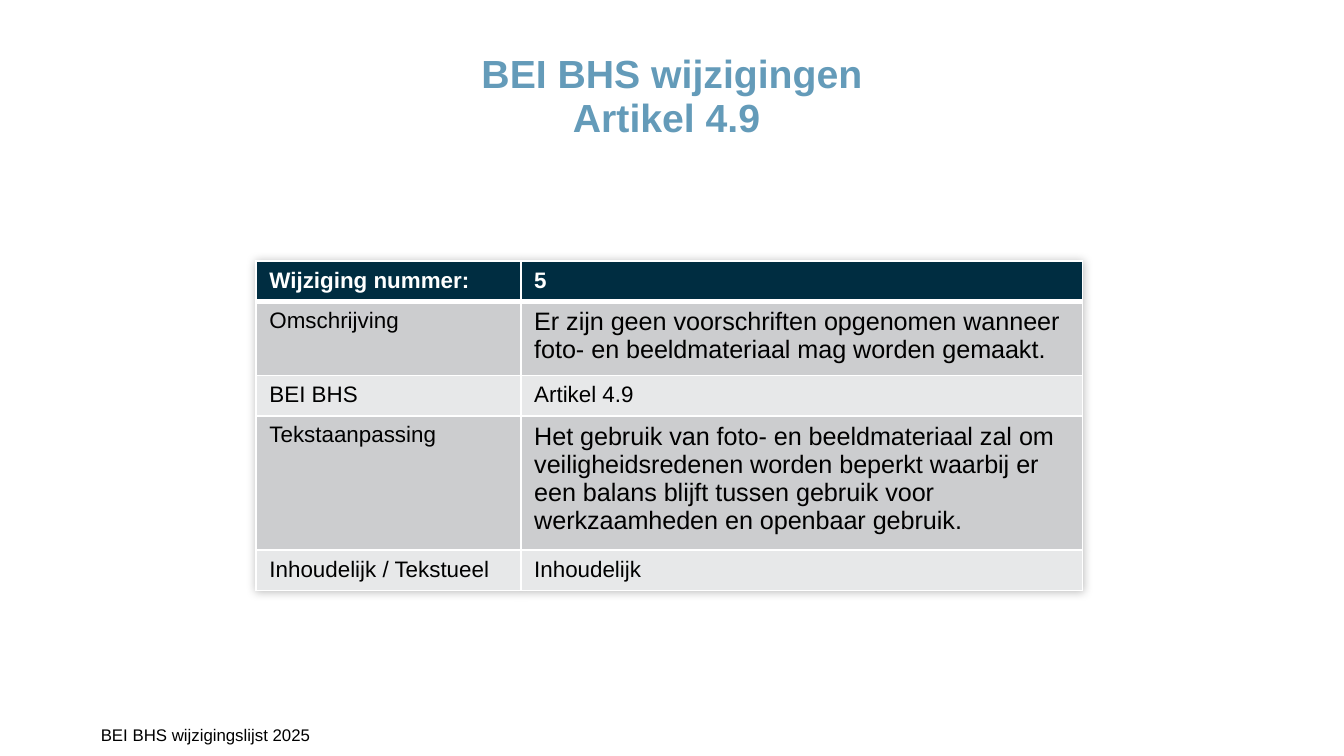
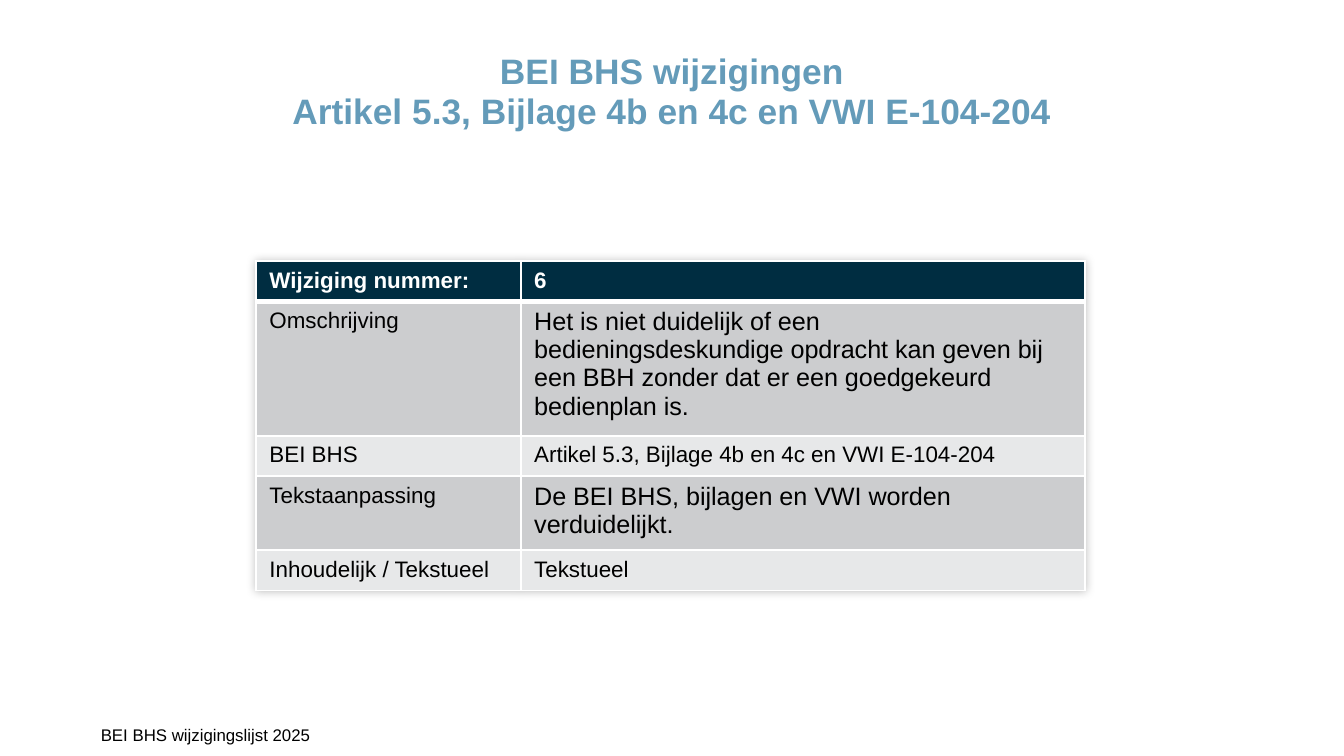
from lxml import etree
from pptx import Presentation
from pptx import util as u
from pptx.dml.color import RGBColor
from pptx.enum import text
from pptx.oxml import ns, parse_xml

HUES = {
    "title": "649BB9", "head": "002D41", "odd": "CCCDCF",
    "even": "E7E8E9", "ink": "000000", "white": "FFFFFF",
}
FONT = "Arial"
GRID = 100  # columns and rows per slide
LEFT = 19.05
LABELS = ["Wijziging nummer:", "Omschrijving", "BEI BHS",
          "Tekstaanpassing", "Inhoudelijk / Tekstueel"]
HEIGHTS = (5.34, 9.4, 5.34, 5.34, 5.34)  # least heights, rows grow with text
LARGE = (1, 3)  # rows whose value is set in larger type
HEAD = "BEI BHS wijzigingen"
FOOT = "BEI BHS wijzigingslijst 2025"


class Deck:
    def __init__(self):
        self.prs = Presentation()
        self.prs.slide_width = u.Inches(10)
        self.prs.slide_height = u.Emu(self.prs.slide_width * 9 // 16)
        self.slide = None

    def x(self, cols):
        return u.Emu(int(self.prs.slide_width * cols / GRID))

    def y(self, rows):
        return u.Emu(int(self.prs.slide_height * rows / GRID))

    def box(self, left, top, width, height):
        return self.x(left), self.y(top), self.x(width), self.y(height)

    def add(self):
        self.slide = self.prs.slides.add_slide(self.prs.slide_layouts[6])

    def style(self, para, size, hue, bold=False):
        font = para.font
        font.name, font.size, font.bold = FONT, u.Pt(size), bold
        font.color.rgb = RGBColor.from_string(HUES[hue])

    def label(self, words, area, size, hue, bold=False, indent=0):
        frame = self.slide.shapes.add_textbox(*self.box(*area)).text_frame
        frame.word_wrap = True
        frame.margin_left = self.x(indent)
        frame.margin_right = frame.margin_top = frame.margin_bottom = 0
        para = frame.paragraphs[0]
        para.text = words
        self.style(para, size, hue, bold)
        return para

    def title(self, topic, size):
        para = self.label(f"{HEAD}\v{topic}", (LEFT, 6.94, 61.9, 16.7),
                          size, "title", True)
        para.alignment = text.PP_ALIGN.CENTER
        para.line_spacing = 0.95

    def footer(self):
        self.label(FOOT, (0, 95.9, 47.2, 4.2), 9, "ink", indent=7.5)

    def edges(self, cell, row):
        """Draw white cell borders, thick between header and body."""
        props = cell._tc.get_or_add_tcPr()
        thick = {0: "B", 1: "T"}.get(row)
        for spot, side in enumerate("LRTB"):
            line = etree.Element(ns.qn(f"a:ln{side}"))
            line.set("w", str(u.Pt(3 if side == thick else 1)))
            fill = etree.SubElement(line, ns.qn("a:solidFill"))
            etree.SubElement(fill, ns.qn("a:srgbClr")).set("val", HUES["white"])
            props.insert(spot, line)

    def shade(self, table):
        """Give the table a soft shadow."""
        table._tbl.tblPr.insert(0, parse_xml(
            f'<a:effectLst {ns.nsdecls("a")}>'
            '<a:outerShdw blurRad="63500" dist="0" dir="5400000">'
            '<a:srgbClr val="000000"><a:alpha val="25000"/></a:srgbClr>'
            '</a:outerShdw></a:effectLst>'))

    def cell(self, cell, words, row, size):
        hue = "head" if row == 0 else "odd" if row % 2 else "even"
        cell.fill.solid()
        cell.fill.fore_color.rgb = RGBColor.from_string(HUES[hue])
        self.edges(cell, row)
        para = cell.text_frame.paragraphs[0]
        para.text = words
        self.style(para, size, "ink" if row else "white", row == 0)

    def table(self, values, wide):
        """Pair the labels with values in two columns."""
        widths = (19.7, wide)
        area = self.box(LEFT, 34.55, sum(widths), sum(HEIGHTS))
        frame = self.slide.shapes.add_table(len(LABELS), 2, *area)
        table = frame.table
        self.shade(table)
        for col, width in zip(table.columns, widths):
            col.width = self.x(width)
        for row, pair in enumerate(zip(LABELS, values)):
            table.rows[row].height = self.y(HEIGHTS[row])
            for col, words in enumerate(pair):
                size = 13.5 if col and row in LARGE else 12
                self.cell(table.cell(row, col), words, row, size)
        frame.height = self.y(43.7)


CHANGES = [
    dict(number="5", topic="Artikel 4.9", gap=" ", size=21, wide=41.8,
         kind="Inhoudelijk",
         issue="Er zijn geen voorschriften opgenomen wanneer foto- en "
               "beeldmateriaal mag worden gemaakt.",
         change="Het gebruik van foto- en beeldmateriaal zal om "
                "veiligheidsredenen worden beperkt waarbij er een balans "
                "blijft tussen gebruik voor werkzaamheden en openbaar "
                "gebruik."),
    dict(number="6", topic="Artikel 5.3, Bijlage 4b en 4c en VWI E-104-204",
         gap="", size=18.9, wide=42, kind="Tekstueel",
         issue="Het is niet duidelijk of een bedieningsdeskundige opdracht "
               "kan geven bij een BBH zonder dat er een goedgekeurd "
               "bedienplan is.",
         change="De BEI BHS, bijlagen en VWI worden verduidelijkt."),
]


def main():
    deck = Deck()
    for item in CHANGES:
        deck.add()
        deck.title(item["topic"] + item["gap"], item["size"])
        values = [item[key] for key in
                  ("number", "issue", "topic", "change", "kind")]
        deck.table(values, item["wide"])
        deck.footer()
    deck.prs.save("out.pptx")


if __name__ == "__main__":
    main()
